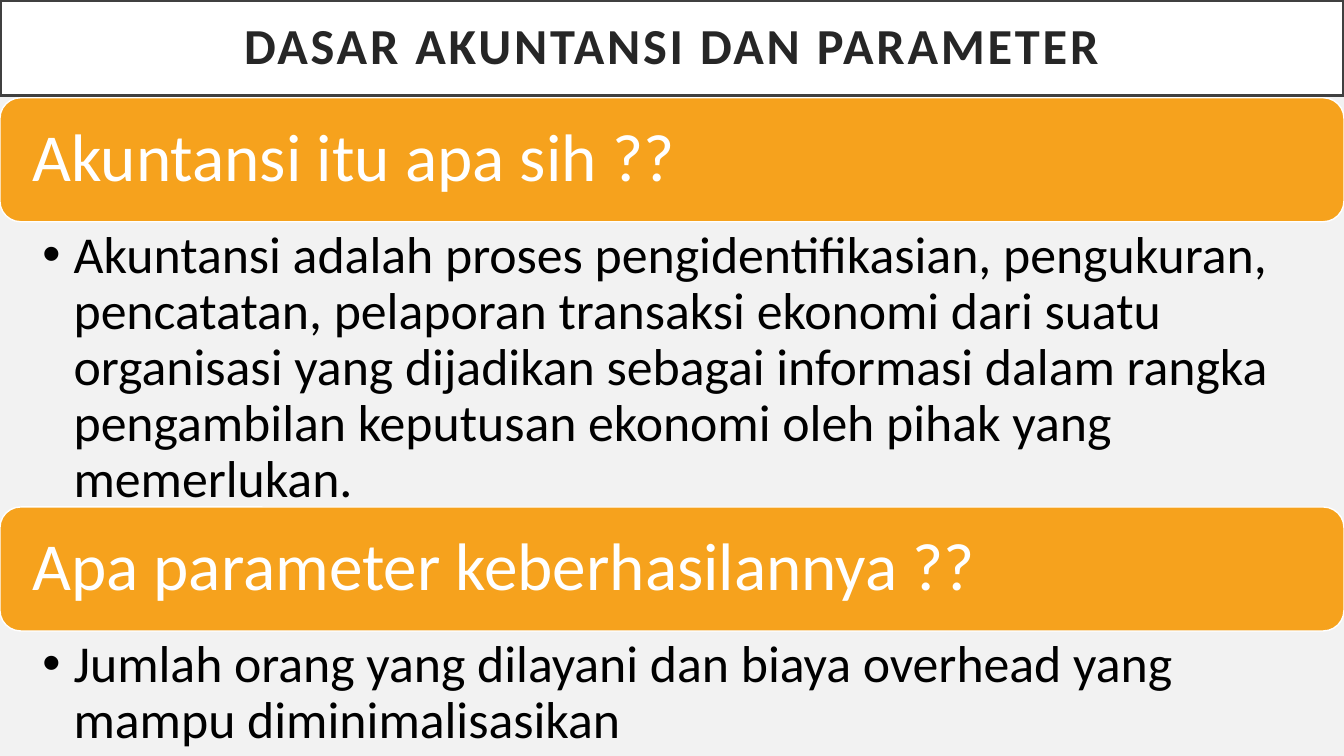
from pptx import Presentation
from pptx.dml.color import RGBColor
from pptx.enum.shapes import MSO_SHAPE
from pptx.enum.text import MSO_ANCHOR, MSO_AUTO_SIZE, PP_ALIGN
from pptx.oxml.ns import qn
from pptx.util import Inches, Pt
from lxml import etree

TITLE = "DASAR AKUNTANSI DAN PARAMETER"
# Question, answer, height of the answer in inches
SECTIONS = [
    ("Akuntansi itu apa sih ??",
     "Akuntansi adalah proses pengidentifikasian, pengukuran, pencatatan, "
     "pelaporan transaksi ekonomi dari suatu organisasi yang dijadikan sebagai "
     "informasi dalam rangka pengambilan keputusan ekonomi oleh pihak yang "
     "memerlukan.", 2.83),
    ("Apa parameter keberhasilannya ??",
     "Jumlah orang yang dilayani dan biaya overhead yang mampu "
     "diminimalisasikan", 1.22),
]
COLORS = {"background": "F2F2F2", "title": "262626", "title_line": "404040",
          "banner": "F6A21D", "white": "FFFFFF", "answer": "000000"}
FONT = "Calibri"
WIDTH, HEIGHT = 13.33, 7.5
TITLE_HEIGHT, BANNER_TOP, BANNER_HEIGHT = 0.95, 0.97, 1.23


def color(name):
    return RGBColor.from_string(COLORS[name])


def place(shape, top, height):
    shape.left, shape.top = Inches(0), Inches(top)
    shape.width, shape.height = Inches(WIDTH), Inches(height)


def paint(shape, fill, line, line_width):
    shape.fill.solid()
    shape.fill.fore_color.rgb = color(fill)
    shape.line.color.rgb = color(line)
    shape.line.width = Pt(line_width)


def write(shape, text, size, text_color, insets, anchor, align=PP_ALIGN.LEFT):
    frame = shape.text_frame
    frame.text = text
    frame.word_wrap = True
    frame.auto_size = MSO_AUTO_SIZE.NONE
    frame.vertical_anchor = anchor
    (frame.margin_left, frame.margin_top,
     frame.margin_right, frame.margin_bottom) = map(Inches, insets)
    paragraph = frame.paragraphs[0]
    paragraph.alignment = align
    paragraph.line_spacing = 0.9
    paragraph.space_before = Pt(0)
    paragraph.font.name = FONT
    paragraph.font.size = Pt(size)
    paragraph.font.color.rgb = color(text_color)
    return paragraph


def add_bullet(paragraph):
    properties = paragraph._p.get_or_add_pPr()
    properties.set("marL", str(Inches(0.31)))
    properties.set("indent", str(Inches(-0.31)))
    bullet = etree.Element(qn("a:buChar"), char="•")
    properties.find(qn("a:defRPr")).addprevious(bullet)


presentation = Presentation()
presentation.slide_width = Inches(WIDTH)
presentation.slide_height = Inches(HEIGHT)
slide = presentation.slides.add_slide(
    presentation.slide_layouts.get_by_name("Two Content"))
slide.background.fill.solid()
slide.background.fill.fore_color.rgb = color("background")

# Title bar
title = slide.shapes.title
place(title, 0, TITLE_HEIGHT)
paint(title, "white", "title_line", 2.5)
heading = write(title, TITLE, 36, "title", [0.2] * 4,
                MSO_ANCHOR.MIDDLE, PP_ALIGN.CENTER)
heading.font.bold = True
heading.runs[0].font._element.set("spc", "200")

# Question banners, each followed by its answer
answer_boxes = list(slide.placeholders)[1:]
top = BANNER_TOP
for (question, answer, answer_height), answer_box in zip(SECTIONS, answer_boxes):
    banner = slide.shapes.add_shape(
        MSO_SHAPE.ROUNDED_RECTANGLE, Inches(0), Inches(top),
        Inches(WIDTH), Inches(BANNER_HEIGHT))
    banner.shadow.inherit = False
    paint(banner, "banner", "white", 1)
    write(banner, question, 48, "white", [0.26] * 4, MSO_ANCHOR.MIDDLE)
    top += BANNER_HEIGHT

    place(answer_box, top, answer_height)
    add_bullet(write(answer_box, answer, 37, "answer",
                     (0.42, 0.07, 0.37, 0.07), MSO_ANCHOR.TOP))
    top += answer_height

presentation.save("out.pptx")
